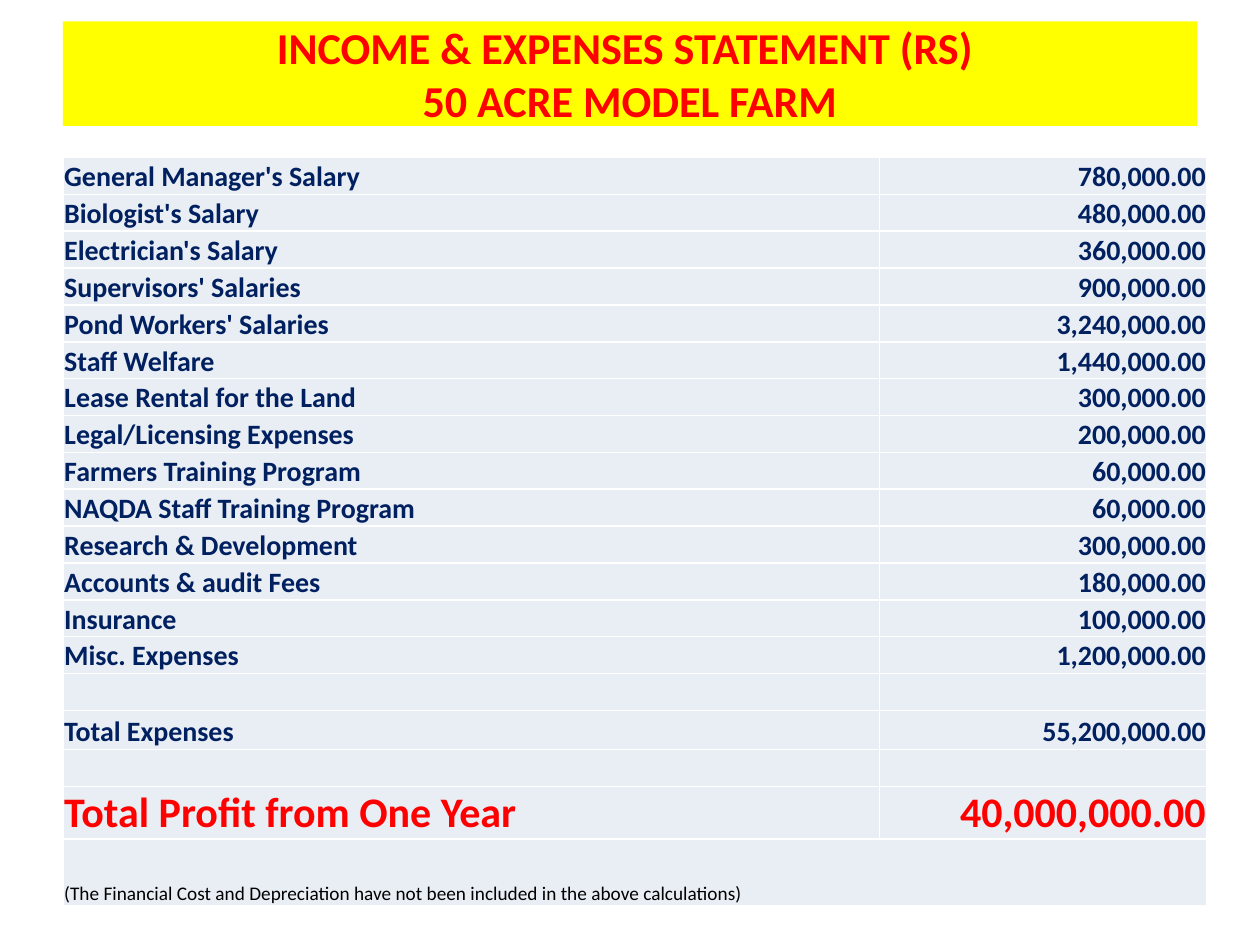
from pptx import Presentation
from pptx.dml.color import RGBColor
from pptx.enum.shapes import MSO_SHAPE
from pptx.enum.text import MSO_ANCHOR, PP_ALIGN
from pptx.oxml.ns import qn
from pptx.util import Inches, Pt

RECT = MSO_SHAPE.RECTANGLE
MIDDLE, BOTTOM = MSO_ANCHOR.MIDDLE, MSO_ANCHOR.BOTTOM
LEFT, CENTER, RIGHT = PP_ALIGN.LEFT, PP_ALIGN.CENTER, PP_ALIGN.RIGHT

FONT = "Calibri"
RED, NAVY, BLACK = "FF0000", "002060", "000000"
YELLOW, PALE = "FFFF00", "E9EDF4"

MARGIN = 0.5
COL_WIDTHS = [6.48, 2.6]
ROW_H = 4.1 / 14  # fourteen expense rows share 4.1 inches
TOTAL_H, PROFIT_H, NOTE_H = 0.31, 0.42, 0.53

EXPENSES = [
    ("General Manager's Salary", 780000),
    ("Biologist's Salary", 480000),
    ("Electrician's Salary", 360000),
    ("Supervisors' Salaries", 900000),
    ("Pond Workers' Salaries", 3240000),
    ("Staff Welfare", 1440000),
    ("Lease Rental for the Land", 300000),
    ("Legal/Licensing Expenses", 200000),
    ("Farmers Training Program", 60000),
    ("NAQDA Staff Training Program", 60000),
    ("Research & Development", 300000),
    ("Accounts & audit Fees", 180000),
    ("Insurance", 100000),
    ("Misc. Expenses", 1200000),
]
TOTAL = ("Total Expenses", 55200000)
PROFIT = ("Total Profit from One Year", 40000000)
NOTE = ("(The Financial Cost and Depreciation have not been included "
        "in the above calculations)")


def rgb(value):
    return RGBColor.from_string(value)


def format_text(p, size, color, bold=True, align=LEFT):
    p.alignment = align
    for r in p.runs:
        r.font.name = FONT
        r.font.size = Pt(size)
        r.font.bold = bold
        r.font.color.rgb = rgb(color)


def add_title(slide, text):
    sp = slide.shapes.add_shape(RECT, Inches(MARGIN), Inches(0.17),
                                Inches(9), Inches(0.83))
    sp.shadow.inherit = False
    sp.fill.solid()
    sp.fill.fore_color.rgb = rgb(YELLOW)
    sp.line.fill.background()
    tf = sp.text_frame
    tf.word_wrap = True
    tf.vertical_anchor = MIDDLE
    tf.text = text
    for p in tf.paragraphs:
        format_text(p, 25.2, RED, align=CENTER)


def fill_cell(cell, text, size, color, bold=True, align=LEFT):
    cell.fill.solid()
    cell.fill.fore_color.rgb = rgb(PALE)
    cell.vertical_anchor = BOTTOM
    cell.margin_left = cell.margin_right = cell.margin_top = Inches(0.01)
    cell.margin_bottom = 0
    p = cell.text_frame.paragraphs[0]
    if text:
        p.text = text
        format_text(p, size, color, bold, align)
    else:
        # An empty cell needs a text size too, or its row grows
        end = p._p.makeelement(qn("a:endParaRPr"), {"sz": str(size * 100)})
        p._p.append(end)


def add_statement(slide):
    # Each row: label, amount, height, text size, colour
    rows = [(*item, ROW_H, 16, NAVY) for item in EXPENSES]
    spacer = ("", None, ROW_H, 16, NAVY)
    rows += [spacer, (*TOTAL, TOTAL_H, 16, NAVY),
             spacer, (*PROFIT, PROFIT_H, 24, RED),
             (NOTE, None, NOTE_H, 11, BLACK)]

    frame = slide.shapes.add_table(
        len(rows), len(COL_WIDTHS), Inches(MARGIN), Inches(1.25),
        Inches(sum(COL_WIDTHS)), Inches(sum(row[2] for row in rows)))
    table = frame.table
    table.first_row = table.horz_banding = False
    for column, width in zip(table.columns, COL_WIDTHS):
        column.width = Inches(width)

    for i, (label, amount, height, size, color) in enumerate(rows):
        table.rows[i].height = Inches(height)
        value = "" if amount is None else f"{amount:,.2f}"
        fill_cell(table.cell(i, 0), label, size, color, bold=label != NOTE)
        fill_cell(table.cell(i, 1), value, size, color, align=RIGHT)

    # The note spans both columns
    last = len(rows) - 1
    table.cell(last, 0).merge(table.cell(last, 1))


def main():
    prs = Presentation()
    prs.slide_width, prs.slide_height = Inches(10), Inches(7.5)
    slide = prs.slides.add_slide(prs.slide_layouts[6])
    add_title(slide, "INCOME & EXPENSES STATEMENT (RS) \v50 ACRE MODEL FARM")
    add_statement(slide)
    prs.save("out.pptx")


if __name__ == "__main__":
    main()
